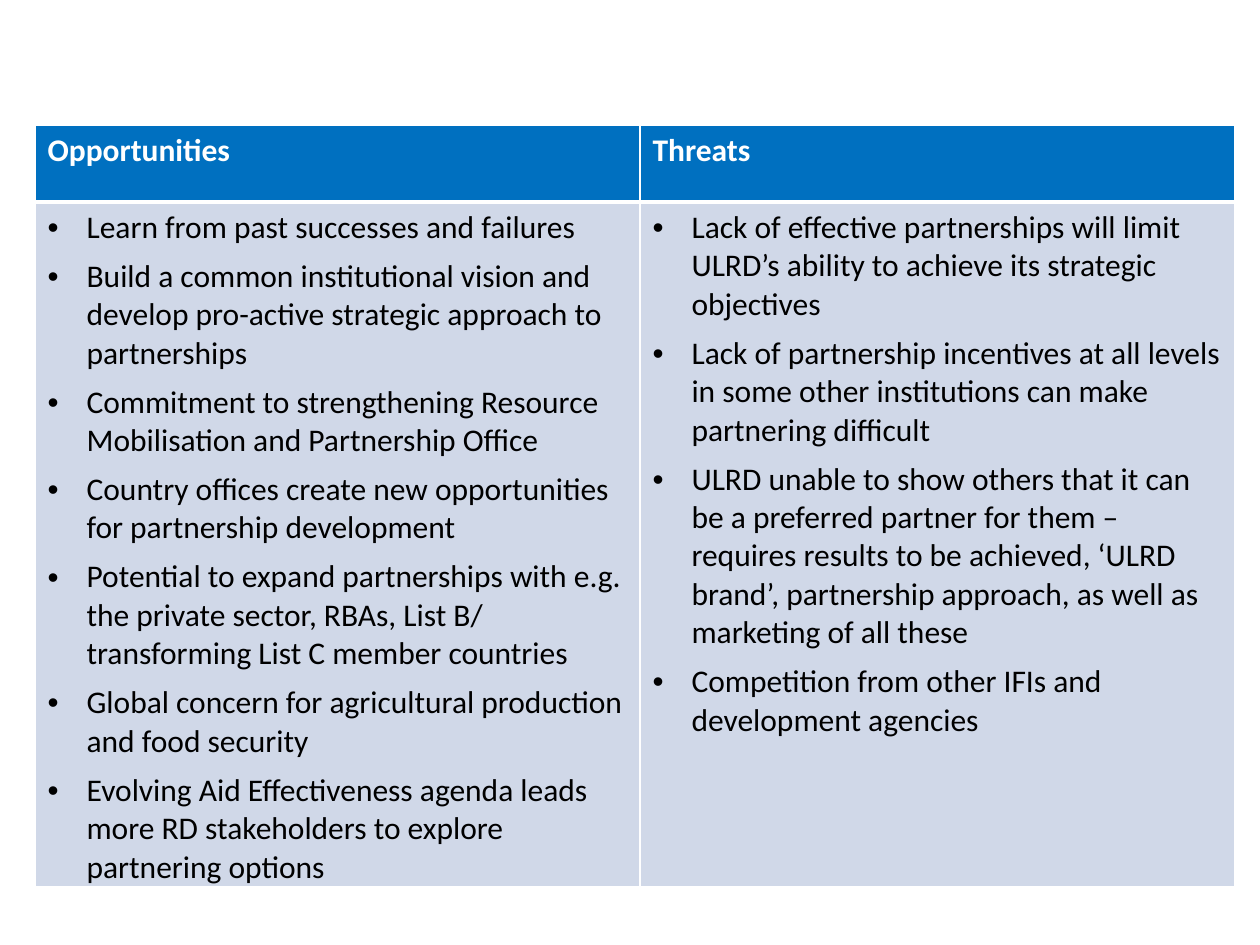
from dataclasses import dataclass

from lxml import etree
from pptx import Presentation, util as u
from pptx.dml.color import RGBColor
from pptx.oxml.ns import qn

PX = u.Inches(1) // 126
WHITE, BLACK, BLUE, PALE = "FFFFFF", "000000", "0070C0", "D0D8E8"
HEADER_HEIGHT, BODY_HEIGHT = 77, 680
INDENT = 39


@dataclass
class Column:
    heading: str
    width: int
    points: list[str]


COLUMNS = [
    Column("Opportunities", 605, [
        "Learn from past successes and failures",
        "Build a common institutional vision and develop pro-active strategic approach to partnerships",
        "Commitment to strengthening Resource Mobilisation and Partnership Office",
        "Country offices create new opportunities for partnership development",
        "Potential to expand partnerships with e.g. the private sector, RBAs, List B/ transforming List C member countries",
        "Global concern for agricultural production and food security",
        "Evolving Aid Effectiveness agenda leads more RD stakeholders to explore partnering options",
    ]),
    Column("Threats", 595, [
        "Lack of effective partnerships will limit ULRD’s ability to achieve its strategic objectives",
        "Lack of partnership incentives at all levels in some other institutions can make partnering difficult",
        "ULRD unable to show others that it can be a preferred partner for them – requires results to be achieved, ‘ULRD brand’, partnership approach, as well as marketing of all these",
        "Competition from other IFIs and development agencies",
    ]),
]


def px(length: int) -> u.Emu:
    return u.Emu(length * PX)


def color(value: str) -> RGBColor:
    return RGBColor.from_string(value)


def add_bullet(para) -> None:
    props = para._p.get_or_add_pPr()
    props.set("marL", str(px(INDENT)))
    props.set("indent", str(px(-INDENT)))
    etree.SubElement(props, qn("a:buFont")).set("typeface", "Arial")
    etree.SubElement(props, qn("a:buChar")).set("char", "•")


def set_borders(cell, bottom: int) -> None:
    """Draw white cell borders: 1 pt, with the given width in points below."""
    props = cell._tc.get_or_add_tcPr()
    widths = {"a:lnL": 1, "a:lnR": 1, "a:lnT": 1, "a:lnB": bottom}
    for place, (tag, width) in enumerate(widths.items()):
        line = etree.Element(qn(tag), w=str(u.Pt(width)))
        fill = etree.SubElement(line, qn("a:solidFill"))
        etree.SubElement(fill, qn("a:srgbClr")).set("val", WHITE)
        props.insert(place, line)


def fill_cell(cell, lines: list[str], header: bool) -> None:
    cell.fill.solid()
    cell.fill.fore_color.rgb = color(BLUE if header else PALE)
    cell.margin_bottom = 0
    set_borders(cell, bottom=3 if header else 1)
    frame = cell.text_frame
    frame.text = "\n".join(lines)
    for para in frame.paragraphs:
        para.space_after = u.Pt(6)
        if not header:
            add_bullet(para)
        para.font.name = "Calibri"
        para.font.size = u.Pt(18)
        para.font.bold = header
        para.font.color.rgb = color(WHITE if header else BLACK)


def add_comparison(slide, left: int, top: int) -> None:
    width = sum(column.width for column in COLUMNS)
    table = slide.shapes.add_table(
        2, len(COLUMNS), px(left), px(top), px(width), px(HEADER_HEIGHT + BODY_HEIGHT)
    ).table
    for row, height in zip(table.rows, (HEADER_HEIGHT, BODY_HEIGHT)):
        row.height = px(height)
    for index, column in enumerate(COLUMNS):
        table.columns[index].width = px(column.width)
        fill_cell(table.cell(0, index), [column.heading], header=True)
        fill_cell(table.cell(1, index), column.points, header=False)


def main() -> None:
    deck = Presentation()
    deck.slide_width, deck.slide_height = px(1260), px(945)
    slide = deck.slides.add_slide(deck.slide_layouts[6])
    add_comparison(slide, left=35, top=125)
    deck.save("out.pptx")


if __name__ == "__main__":
    main()
